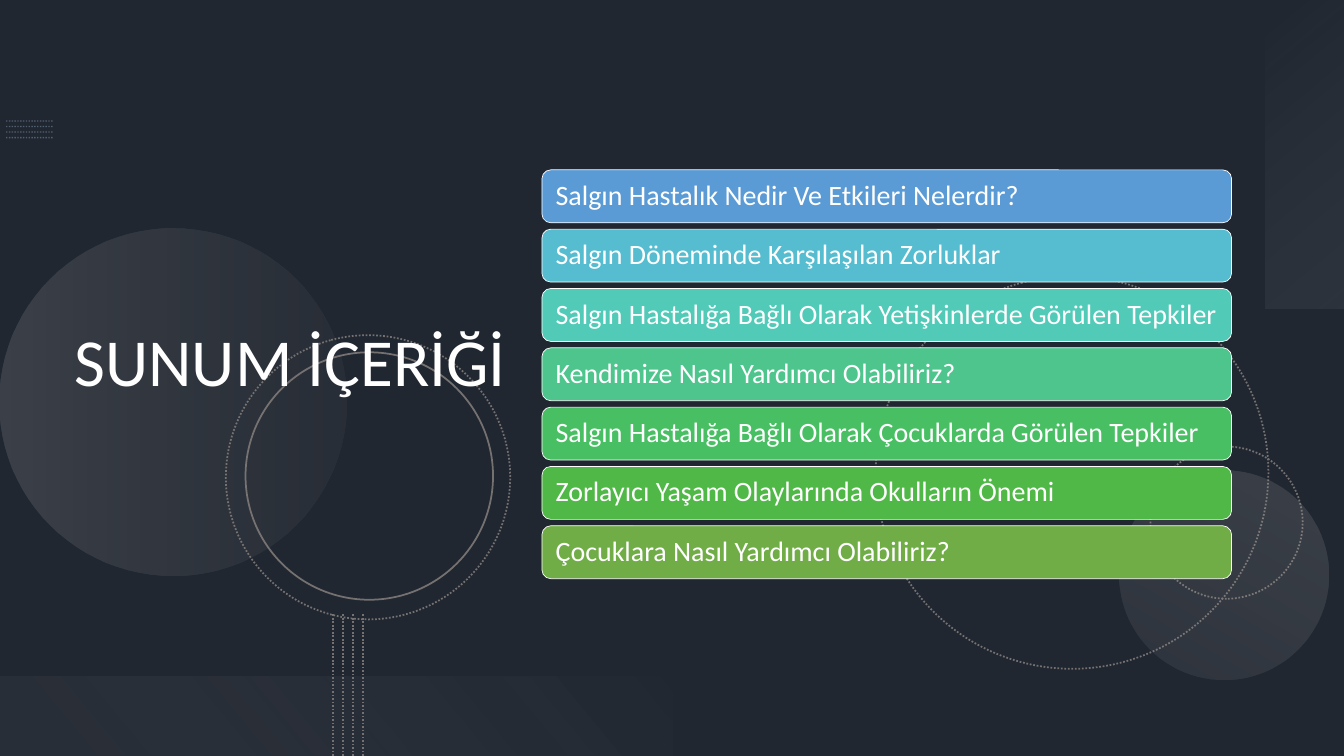
from lxml import etree
from pptx import Presentation
from pptx import util as u
from pptx.dml import color
from pptx.enum import dml, shapes, text
from pptx.oxml import ns

GREY = "767171"
ITEMS = [
    ("Salgın Hastalık Nedir Ve Etkileri Nelerdir?", "5B9BD5"),
    ("Salgın Döneminde Karşılaşılan Zorluklar", "56BCD0"),
    ("Salgın Hastalığa Bağlı Olarak Yetişkinlerde Görülen Tepkiler", "52CAB8"),
    ("Kendimize Nasıl Yardımcı Olabiliriz?", "4DC58D"),
    ("Salgın Hastalığa Bağlı Olarak Çocuklarda Görülen Tepkiler", "49BF64"),
    ("Zorlayıcı Yaşam Olaylarında Okulların Önemi", "50B846"),
    ("Çocuklara Nasıl Yardımcı Olabiliriz?", "70AD47"),
]
RINGS = [
    (17.37, 5.48, 7.79, 75, True),
    (22.82, 8.86, 3.02, 270, True),
    (4.48, 6.65, 5.64, 75, True),
    (4.87, 6.99, 4.91, 75, False),
]
DISCS = [
    ((0, 4.54, 6.88, 6.88), 270, [(0, "AFABAB", 20), (100, GREY, 10)]),
    ((22.2, 9.34, 4.15, 4.15), 210, [(0, "AFABAB", 10), (100, "AFABAB", 20)]),
]
BANDS = [
    ((22.83, 2.28, 6.12, 1.56), 270, [(0, "F5F5F5", 0), (100, "AFABAB", 10)]),
    ((0, 13.43, 13.33, 1.56), 180, [(10, GREY, 10), (100, "F1F0F0", 0)]),
]


def rgb(code):
    return color.RGBColor.from_string(code)


def sub(node, tag, **attrs):
    return etree.SubElement(node, ns.qn(tag), attrs)


def fade(item, pct):
    for node in item._element.spPr.iter(ns.qn("a:srgbClr")):
        sub(node, "a:alpha", val=str(pct * 1000))


def style(line, code, width, dotted):
    line.color.rgb = rgb(code)
    line.width = u.Pt(width)
    if dotted:
        line.dash_style = dml.MSO_LINE.ROUND_DOT


def shape(slide, kind, box, turn=0, fill=None):
    item = slide.shapes.add_shape(kind, *map(u.Inches, box))
    item.shadow.inherit = False
    item.rotation = turn
    item.line.fill.background()
    if fill:
        item.fill.solid()
        item.fill.fore_color.rgb = rgb(fill)
    else:
        item.fill.background()
    return item


def ring(slide, x, y, size, turn, dotted):
    item = shape(slide, shapes.MSO_SHAPE.OVAL, (x, y, size, size), turn)
    style(item.line, GREY, 2.5, dotted)


def blend(slide, kind, box, turn, stops, angle):
    item = shape(slide, kind, box, turn)
    props = item._element.spPr
    grad = etree.Element(ns.qn("a:gradFill"), rotWithShape="1")
    marks = sub(grad, "a:gsLst")
    for pos, code, pct in stops:
        mark = sub(marks, "a:gs", pos=str(pos * 1000))
        tint = sub(mark, "a:srgbClr", val=code)
        sub(tint, "a:alpha", val=str(pct * 1000))
    sub(grad, "a:lin", ang=str(angle * 60000), scaled="0")
    props.replace(props.find(ns.qn("a:noFill")), grad)


def rule(slide, ends, code, width, pct=100):
    item = slide.shapes.add_connector(
        shapes.MSO_CONNECTOR.STRAIGHT, *map(u.Inches, ends))
    style(item.line, code, width, True)
    if pct < 100:
        fade(item, pct)
    sub(item._element.spPr, "a:effectLst")


def write(item, words, size, inset):
    frame = item.text_frame
    frame.text = words
    form = {
        "word_wrap": True,
        "auto_size": text.MSO_AUTO_SIZE.NONE,
        "vertical_anchor": text.MSO_ANCHOR.MIDDLE,
        "margin_left": u.Inches(inset),
        "margin_right": u.Inches(inset),
    }
    for key, value in form.items():
        setattr(frame, key, value)
    para = frame.paragraphs[0]
    para.alignment = text.PP_ALIGN.LEFT
    para.line_spacing = 0.9
    font = para.runs[0].font
    for key, value in {"name": "Calibri", "size": u.Pt(size)}.items():
        setattr(font, key, value)
    font.color.rgb = rgb("FFFFFF")


def title(slide, words, box):
    item = slide.shapes.title
    for key, value in zip(("left", "top", "width", "height"), box):
        setattr(item, key, u.Inches(value))
    write(item, words, 96, 0.1)
    tree = slide.shapes._spTree
    tree.remove(item._element)
    tree.append(item._element)


def bar(slide, row, words, fill):
    box = (10.75, 3.37 + row * 1.18 - row * 0.003, 13.68, 1.05)
    item = shape(slide, shapes.MSO_SHAPE.ROUNDED_RECTANGLE, box, fill=fill)
    style(item.line, "FFFFFF", 1, False)
    write(item, words, 40, 0.22)


def main():
    deck = Presentation()
    deck.slide_width, deck.slide_height = u.Inches(26.66), u.Inches(15)
    slide = deck.slides.add_slide(deck.slide_layouts[5])
    back = slide.background.fill
    back.solid()
    back.fore_color.rgb = rgb("44546A")

    rect, oval = shapes.MSO_SHAPE.RECTANGLE, shapes.MSO_SHAPE.OVAL
    shade = shape(slide, rect, (0, 0, 26.66, 15), fill="000000")
    fade(shade, 53)
    for step in range(4):
        y = 2.4 + step * 0.11
        rule(slide, (0.12, y, 1.06, y), "8497B0", 2, 50)
    for spec_row in RINGS:
        ring(slide, *spec_row)
    for disc in DISCS:
        blend(slide, oval, *disc, 90)
    for band in BANDS:
        blend(slide, rect, *band, 140)
    for step in range(4):
        x = 6.6 + step * 0.2
        rule(slide, (x, 12.19, x, 15), GREY, 2.5)
    title(slide, "SUNUM İÇERİĞİ", (1.38, 1.08, 9.18, 12.33))
    for row, (words, fill) in enumerate(ITEMS):
        bar(slide, row, words, fill)
    deck.save("out.pptx")


if __name__ == "__main__":
    main()
